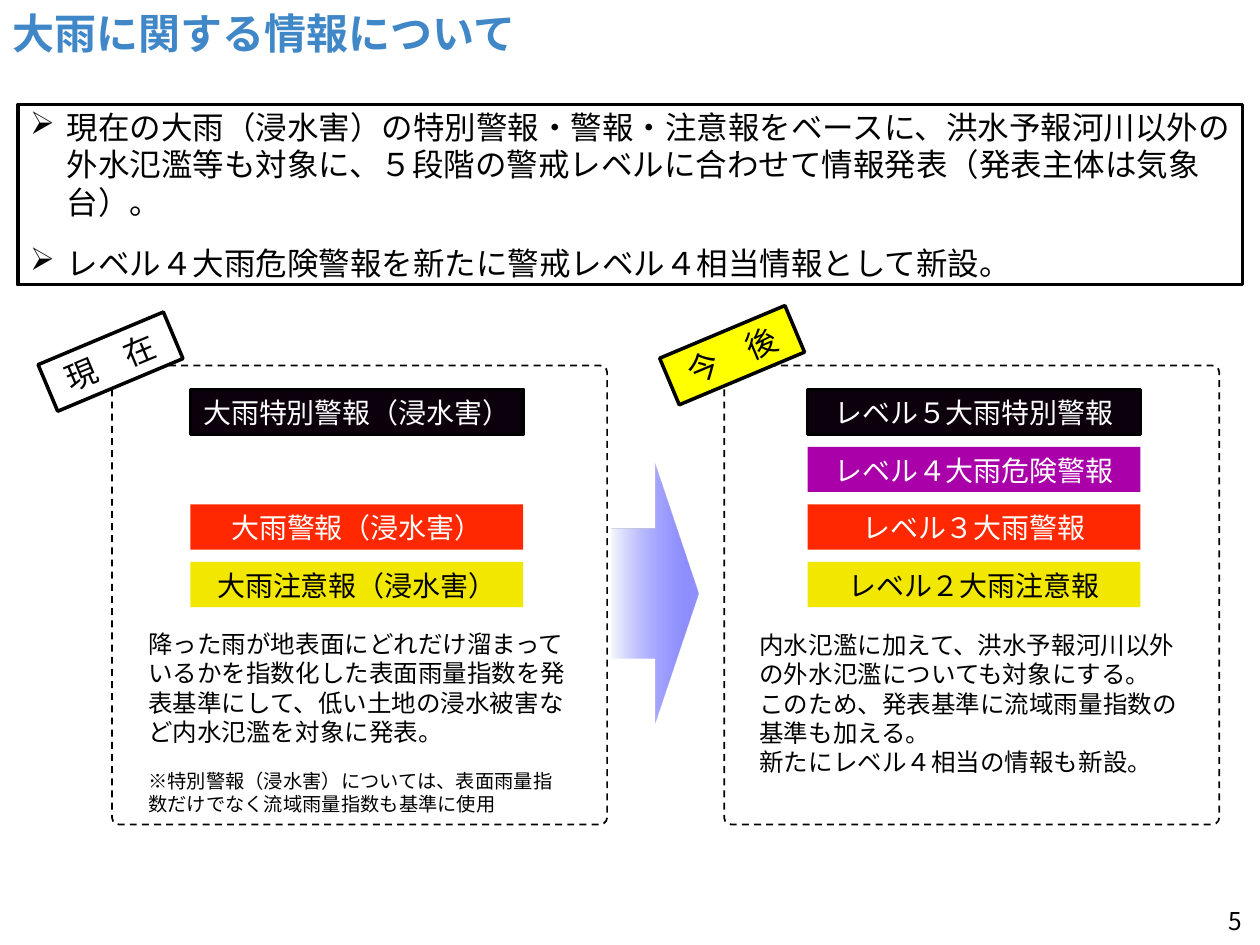
from lxml import etree
from pptx import Presentation, util as u
from pptx.dml.color import RGBColor
from pptx.enum import dml, shapes, text
from pptx.oxml import parse_xml
from pptx.oxml.ns import nsdecls, qn

Cm, Pt = u.Cm, u.Pt
KIND = shapes.MSO_SHAPE
ALIGN, ANCHOR = text.PP_ALIGN, text.MSO_ANCHOR
FONT = "Noto Sans CJK JP"
HUE = {"black": "000000", "white": "FFFFFF", "blue": "4087C8", "level5": "0C000C",
       "level4": "AA00AA", "level3": "FF2800", "level2": "F2E700", "yellow": "FFFF00"}

deck = Presentation()
deck.slide_width, deck.slide_height = Cm(25.4), Cm(19.05)
slide = deck.slides.add_slide(deck.slide_layouts[6])


def draw(kind, area, fill=None, line=0):
    """Add a shape; line is its width in points, 0 for none."""
    shape = slide.shapes.add_shape(kind, *map(Cm, area))
    shape.shadow.inherit = False
    if fill:
        shape.fill.solid()
        shape.fill.fore_color.rgb = RGBColor.from_string(HUE[fill])
    else:
        shape.fill.background()
    if line:
        shape.line.color.rgb = RGBColor.from_string(HUE["black"])
        shape.line.width = Pt(line)
    else:
        shape.line.fill.background()
    return shape


def write(shape, lines, hue="black", align=ALIGN.LEFT, anchor=ANCHOR.TOP,
          font=FONT, bold=False, bullet=None, wrap=True):
    """Fill a shape with lines of (text, size, space before)."""
    frame = shape.text_frame
    frame.word_wrap, frame.vertical_anchor = wrap, anchor
    frame.text = "\n".join(line[0] for line in lines)
    for para, (_, size, gap) in zip(frame.paragraphs, lines):
        para.alignment = align
        para.line_spacing = Pt(size * 1.2)
        if gap:
            para.space_before = Pt(gap)
        if bullet:
            props = para._p.get_or_add_pPr()
            props.set("marL", str(Cm(0.74)))
            props.set("indent", str(-Cm(0.74)))
            etree.SubElement(props, qn("a:buChar"), char=bullet)
        for run in para.runs:
            run.font.size, run.font.bold, run.font.name = Pt(size), bold, font
            run.font.color.rgb = RGBColor.from_string(HUE[hue])
            etree.SubElement(run._r.get_or_add_rPr(), qn("a:ea"), typeface=font)


# Title and page number
title = slide.shapes.add_textbox(Cm(0), Cm(0), Cm(13.69), Cm(1.32))
write(title, [("大雨に関する情報について", 24, 0)], "blue", anchor=ANCHOR.MIDDLE, bold=True)
page = slide.shapes.add_textbox(Cm(23.9), Cm(18.14), Cm(1.4), Cm(0.79))
write(page, [("5", 14, 0)], align=ALIGN.RIGHT, wrap=False)

# Summary box
lead = draw(KIND.RECTANGLE, (0.36, 2.11, 24.69, 3.63), line=2)
write(lead, [
    ("現在の大雨（浸水害）の特別警報・警報・注意報をベースに、洪水予報河川以外の"
     "外水氾濫等も対象に、５段階の警戒レベルに合わせて情報発表（発表主体は気象台）。", 18, 0),
    ("レベル４大雨危険警報を新たに警戒レベル４相当情報として新設。", 18, 13),
], anchor=ANCHOR.MIDDLE, bullet="➢")

# Panels: panel left, tag (left, top, fill, text), bars left, {level: text}, note (area, lines)
panels = [
    (2.26, (0.86, 6.78, "white", "現　在"), 3.84,
     {5: "大雨特別警報（浸水害）", 3: "大雨警報（浸水害）", 2: "大雨注意報（浸水害）"},
     (2.74, 12.55, 9.04, 4.01),
     [("降った雨が地表面にどれだけ溜まっているかを指数化した表面雨量指数を"
       "発表基準にして、低い土地の浸水被害など内水氾濫を対象に発表。", 14, 0),
      ("※特別警報（浸水害）については、表面雨量指数だけでなく流域雨量指数も基準に使用", 11, 13)]),
    (14.6, (13.39, 6.65, "yellow", "今　後"), 16.28,
     {5: "レベル５大雨特別警報", 4: "レベル４大雨危険警報",
      3: "レベル３大雨警報", 2: "レベル２大雨注意報"},
     (15.06, 12.57, 9.14, 3.25),
     [("内水氾濫に加えて、洪水予報河川以外の外水氾濫についても対象にする。", 14, 0),
      ("このため、発表基準に流域雨量指数の基準も加える。", 14, 0),
      ("新たにレベル４相当の情報も新設。", 14, 0)]),
]
for left, (tagx, tagy, tint, name), barx, bars, area, note in panels:
    frame = draw(KIND.ROUNDED_RECTANGLE, (left, 7.37, 9.98, 9.25), line=1)
    frame.adjustments[0] = 0.015
    frame.line.dash_style = dml.MSO_LINE.DASH

    for level, label in bars.items():
        top = 7.85 + (5 - level) * 1.16
        bar = draw(KIND.RECTANGLE, (barx, top, 6.71, 0.91), f"level{level}",
                   line=2 if level == 5 else 0)
        write(bar, [(label, 16, 0)], "black" if level == 2 else "white", ALIGN.CENTER)

    tag = draw(KIND.RECTANGLE, (tagx, tagy, 2.74, 1.02), tint, line=2)
    tag.rotation = 337.2
    write(tag, [(name, 18, 0)], align=ALIGN.CENTER, font="Arial")

    box = slide.shapes.add_textbox(*map(Cm, area))
    write(box, note)

# Arrow with a fading fill
arrow = draw(KIND.RIGHT_ARROW, (12.34, 9.35, 1.73, 5.23))
props = arrow._element.spPr
props.replace(props.find(qn("a:noFill")), parse_xml(
    f'<a:gradFill {nsdecls("a")} rotWithShape="1"><a:gsLst>'
    '<a:gs pos="0"><a:srgbClr val="F6F9FC"/></a:gs>'
    '<a:gs pos="74000"><a:srgbClr val="5B5BFF"><a:alpha val="65000"/></a:srgbClr></a:gs>'
    '<a:gs pos="100000"><a:srgbClr val="0000FF"><a:alpha val="42000"/></a:srgbClr></a:gs>'
    '</a:gsLst><a:lin ang="0" scaled="0"/></a:gradFill>'))

deck.save("out.pptx")
